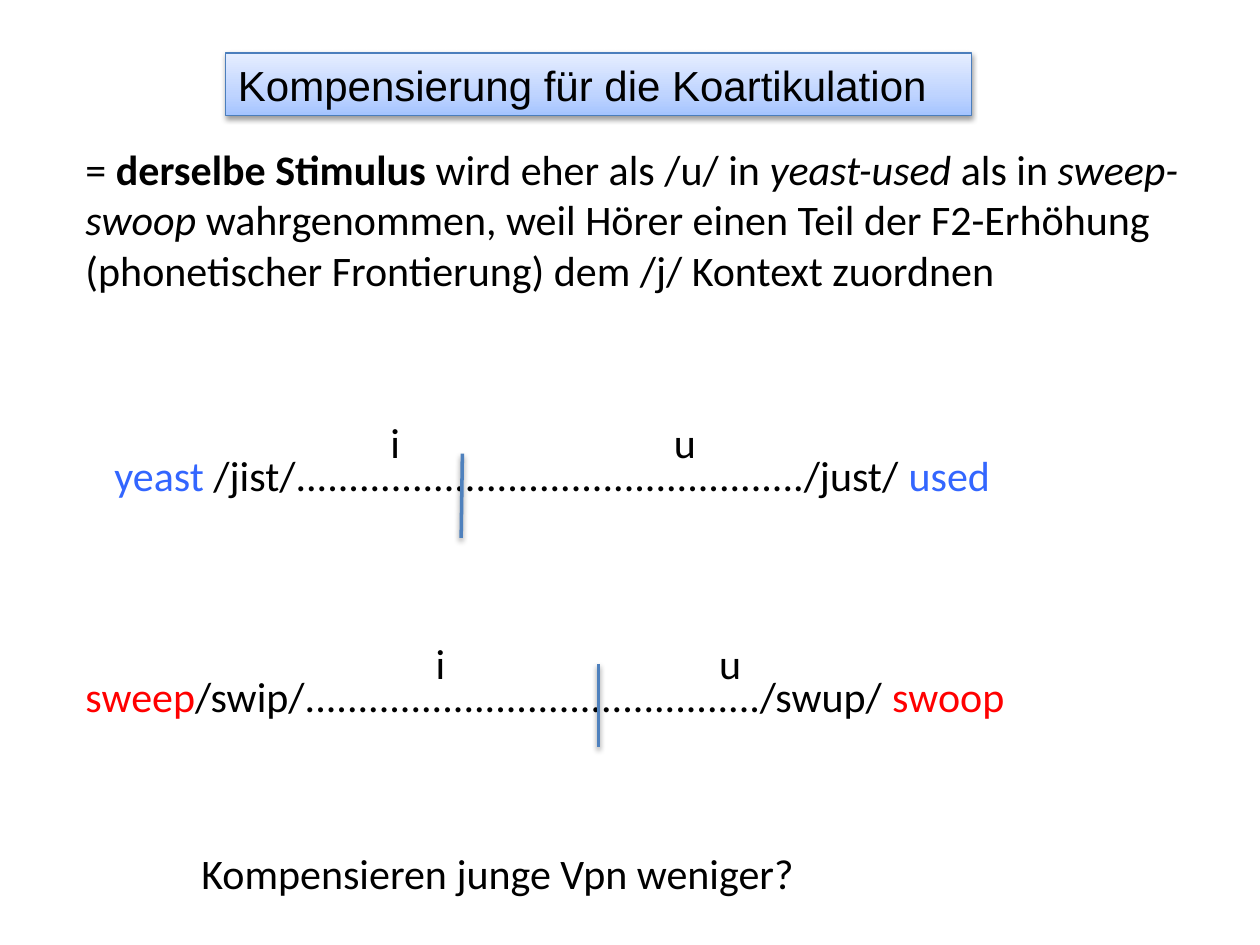
import copy

import pptx
import pptx.dml.color
import pptx.enum.shapes
import pptx.enum.text
import pptx.oxml
import pptx.oxml.ns
import pptx.util
from pptx.util import Inches

COLORS = {
    "text": "000000",
    "yeast": "3366FF",
    "sweep": "FF0000",
    "boundary": "4F81BD",
    "title_line": "4B7EBC",
}
TITLE_GRADIENT = [(0, "A4C4FF"), (0.35, "BFD4FF"), (1, "E6EEFF")]
SHADOW = (
    f'<a:effectLst {pptx.oxml.ns.nsdecls("a")}>'
    '<a:outerShdw blurRad="40000" dist="20000" dir="5400000" rotWithShape="0">'
    '<a:srgbClr val="000000"><a:alpha val="38000"/></a:srgbClr>'
    '</a:outerShdw></a:effectLst>'
)


def rgb(value):
    return pptx.dml.color.RGBColor.from_string(value)


class SlideBuilder:
    def __init__(self, slide, font="Calibri", size=24):
        self.slide = slide
        self.font = font
        self.size = pptx.util.Pt(size)

    def add_shadow(self, sp):
        sp._element.spPr.append(pptx.oxml.parse_xml(SHADOW))

    def fill_text(self, sp, runs, font=None, wrap=True):
        """Each run is (text, colour name, style), style being '', 'b' or 'i'."""
        tf = sp.text_frame
        tf.word_wrap = wrap
        tf.auto_size = pptx.enum.text.MSO_AUTO_SIZE.SHAPE_TO_FIT_TEXT
        tf.vertical_anchor = pptx.enum.text.MSO_ANCHOR.TOP
        p = tf.paragraphs[0]
        p.alignment = pptx.enum.text.PP_ALIGN.LEFT
        p.font.name = font or self.font
        p.font.size = self.size
        for text, color, style in runs:
            r = p.add_run()
            r.text = text
            r.font.color.rgb = rgb(COLORS[color])
            if style == "b":
                r.font.bold = True
            elif style == "i":
                r.font.italic = True

    def text(self, x, y, w, h, runs, wrap=True):
        sp = self.slide.shapes.add_textbox(Inches(x), Inches(y), Inches(w), Inches(h))
        self.fill_text(sp, runs, wrap=wrap)

    def title(self, x, y, w, h, text):
        sp = self.slide.shapes.add_shape(
            pptx.enum.shapes.MSO_SHAPE.RECTANGLE,
            Inches(x), Inches(y), Inches(w), Inches(h))
        sp.fill.gradient()
        sp.fill.gradient_angle = 90
        # The default gradient has two stops; a third is needed
        first = sp._element.spPr.xpath(".//a:gs")[0]
        first.addnext(copy.deepcopy(first))
        for stop, (position, color) in zip(sp.fill.gradient_stops, TITLE_GRADIENT):
            stop.position = position
            stop.color.rgb = rgb(color)
        sp.line.color.rgb = rgb(COLORS["title_line"])
        sp.line.width = pptx.util.Pt(0.75)
        self.add_shadow(sp)
        self.fill_text(sp, [(text, "text", "")], font="Arial")

    def boundary(self, x1, y1, x2, y2):
        line = self.slide.shapes.add_connector(
            pptx.enum.shapes.MSO_CONNECTOR.STRAIGHT,
            Inches(x1), Inches(y1), Inches(x2), Inches(y2))
        line.line.color.rgb = rgb(COLORS["boundary"])
        line.line.width = pptx.util.Pt(2)
        self.add_shadow(line)

    def vowels(self, x, y):
        for vowel, dx, w in (("u", 2.25, 0.39), ("i", 0, 0.28)):
            self.text(x + dx, y, w, 0.5, [(vowel, "text", "")], wrap=False)


def main():
    prs = pptx.Presentation()
    prs.slide_width, prs.slide_height = Inches(10), Inches(7.5)
    s = SlideBuilder(prs.slides.add_slide(prs.slide_layouts[6]))

    # Title and definition
    s.title(1.79, 0.42, 5.92, 0.5, "Kompensierung für die Koartikulation")
    s.text(0.58, 1.09, 9.08, 1.31, [
        ("= ", "text", ""),
        ("derselbe Stimulus ", "text", "b"),
        ("wird eher als /u/ in ", "text", ""),
        ("yeast-used ", "text", "i"),
        ("als in ", "text", ""),
        ("sweep-swoop ", "text", "i"),
        ("wahrgenommen, weil Hörer einen Teil der F2-Erhöhung "
         "(phonetischer Frontierung) dem /j/ Kontext zuordnen", "text", ""),
    ])

    # Continuum yeast - used
    s.text(0.81, 3.52, 7.22, 0.91, [
        ("yeast", "yeast", ""),
        (" /jist/" + "." * 48 + "/just/ ", "text", ""),
        ("used", "yeast", ""),
    ], wrap=False)
    s.boundary(3.67, 3.6, 3.66, 4.27)

    # Continuum sweep - swoop
    s.text(0.58, 5.27, 8.5, 0.91, [
        ("sweep", "sweep", ""),
        ("/swip/" + "." * 43 + "/swup/ ", "text", ""),
        ("swoop", "sweep", ""),
    ])
    s.boundary(4.75, 5.27, 4.75, 5.93)

    # Vowel labels above each continuum
    for x, y in ((3, 3.26), (3.36, 5.01)):
        s.vowels(x, y)

    # Closing question
    s.text(1.5, 6.68, 5.77, 0.5, [("Kompensieren junge Vpn weniger?", "text", "")])

    prs.save("out.pptx")


if __name__ == "__main__":
    main()
